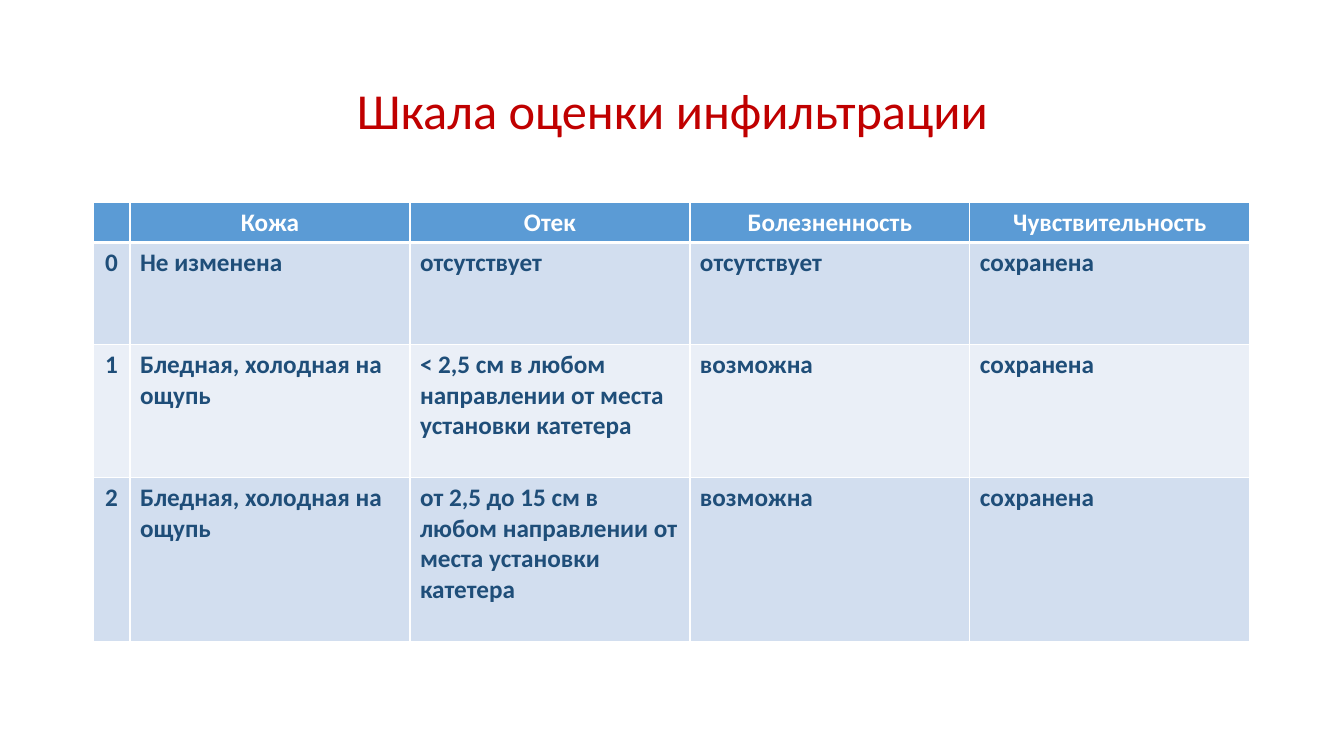
import lxml.etree
import pptx
import pptx.dml.color
import pptx.enum.text
import pptx.oxml.ns
import pptx.util

RGBColor = pptx.dml.color.RGBColor
CENTER = pptx.enum.text.PP_ALIGN.CENTER
LEFT = pptx.enum.text.PP_ALIGN.LEFT

RED = RGBColor(0xC0, 0x00, 0x00)
WHITE = RGBColor(0xFF, 0xFF, 0xFF)
NAVY = RGBColor(0x1F, 0x4E, 0x79)
HEADER_BLUE = RGBColor(0x5B, 0x9B, 0xD5)
BANDS = (RGBColor(0xD2, 0xDE, 0xEF), RGBColor(0xEA, 0xEF, 0xF7))

COLUMN_WIDTHS = (37, 280, 280, 280, 280)
ROW_HEIGHTS = (40, 102, 133, 164)
SCALE_ROWS = (
    ("", "Кожа", "Отек", "Болезненность", "Чувствительность"),
    ("0", "Не изменена", "отсутствует", "отсутствует", "сохранена"),
    ("1", "Бледная, холодная на ощупь",
     "< 2,5 см в любом направлении от места установки катетера", "возможна", "сохранена"),
    ("2", "Бледная, холодная на ощупь",
     "от 2,5 до 15 см в любом направлении от места установки катетера", "возможна", "сохранена"),
)


class SlideBuilder:
    """Draws styled elements on one slide, with lengths in px."""

    FONT = "Calibri"
    EMU_PER_PX = 914400 / 100.8

    def __init__(self, presentation, width, height):
        presentation.slide_width = self.emu(width)
        presentation.slide_height = self.emu(height)
        self.slide = presentation.slides.add_slide(presentation.slide_layouts[6])

    def emu(self, px):
        return pptx.util.Emu(round(px * self.EMU_PER_PX))

    def add_words(self, paragraph, words, size, color, bold, align):
        paragraph.alignment = align
        run = paragraph.add_run()
        run.text = words
        run.font.name = self.FONT
        run.font.size = pptx.util.Pt(size)
        run.font.bold = bold
        run.font.color.rgb = color

    def title(self, words, left, top, width, height):
        frame = self.slide.shapes.add_textbox(*map(self.emu, (left, top, width, height))).text_frame
        frame.word_wrap = True
        frame.vertical_anchor = pptx.enum.text.MSO_ANCHOR.MIDDLE
        frame.paragraphs[0].line_spacing = 0.9
        self.add_words(frame.paragraphs[0], words, 36, RED, False, CENTER)

    def border(self, cell, side, points):
        properties = cell._tc.get_or_add_tcPr()
        qn = pptx.oxml.ns.qn
        line = lxml.etree.SubElement(properties, qn(f"a:ln{side}"), w=str(pptx.util.Pt(points)))
        fill = lxml.etree.SubElement(line, qn("a:solidFill"))
        lxml.etree.SubElement(fill, qn("a:srgbClr"), val=str(WHITE))

    def cell(self, cell, words, row, column):
        header = row == 0
        for side in "LRTB":
            under_header = (row, side) in ((0, "B"), (1, "T"))
            self.border(cell, side, 3 if under_header else 1)
        cell.fill.solid()
        cell.fill.fore_color.rgb = HEADER_BLUE if header else BANDS[(row - 1) % 2]
        if words:
            align = CENTER if header or column == 0 else LEFT
            self.add_words(cell.text_frame.paragraphs[0], words, 18,
                           WHITE if header else NAVY, True, align)

    def table(self, rows, left, top, widths, heights):
        box = map(self.emu, (left, top, sum(widths), sum(heights)))
        table = self.slide.shapes.add_table(len(rows), len(widths), *box).table
        for column, width in zip(table.columns, widths):
            column.width = self.emu(width)
        for row, height in zip(table.rows, heights):
            row.height = self.emu(height)
        for row, entries in enumerate(rows):
            for column, words in enumerate(entries):
                self.cell(table.cell(row, column), words, row, column)


def main():
    presentation = pptx.Presentation()
    builder = SlideBuilder(presentation, 1344, 756)
    builder.title("Шкала оценки инфильтрации", 93, 40, 1159, 146)
    builder.table(SCALE_ROWS, 93, 202, COLUMN_WIDTHS, ROW_HEIGHTS)
    presentation.save("out.pptx")


if __name__ == "__main__":
    main()
